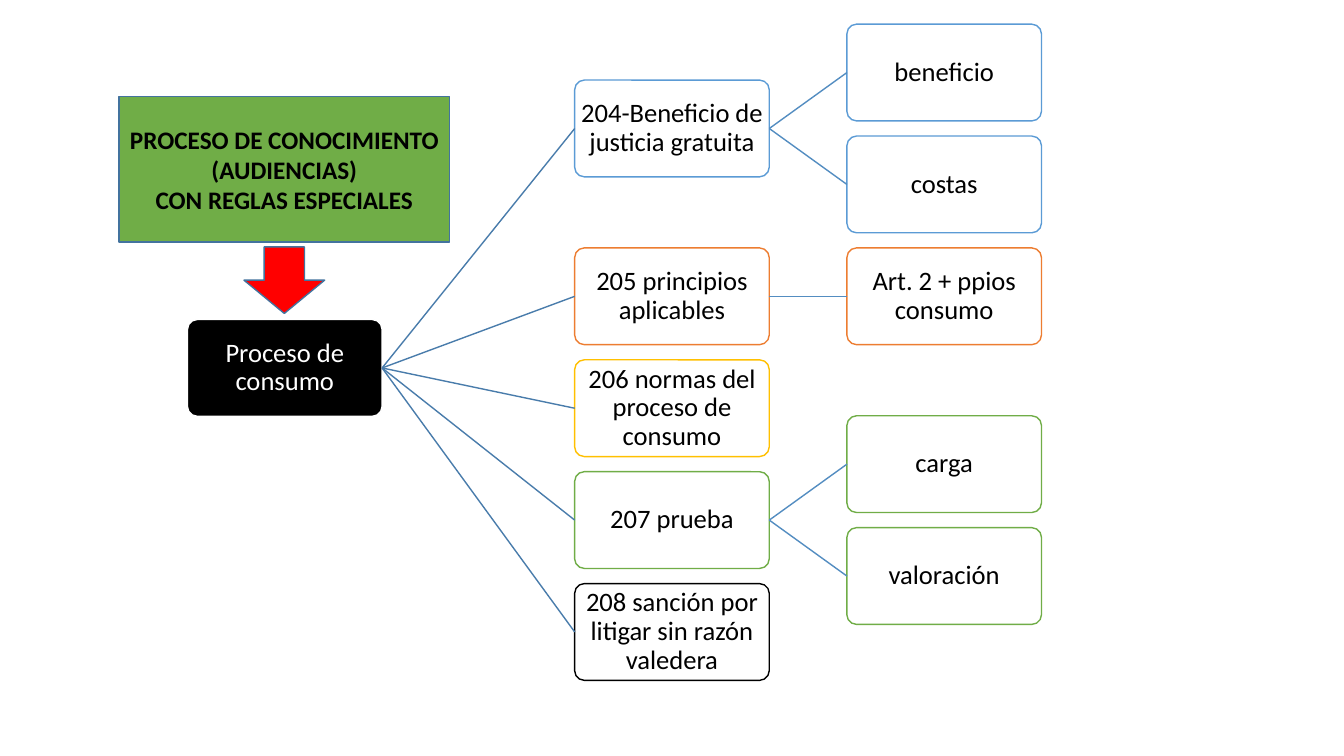
from lxml.etree import SubElement
from pptx import Presentation
from pptx.dml.color import RGBColor as RGB
from pptx.enum.shapes import MSO_CONNECTOR as LINK, MSO_SHAPE as SHAPE
from pptx.enum.text import MSO_ANCHOR as ANCHOR, PP_ALIGN as ALIGN
from pptx.oxml.ns import qn
from pptx.util import Inches, Pt

BLACK = RGB(0x00, 0x00, 0x00)
WHITE = RGB(0xFF, 0xFF, 0xFF)
RED = RGB(0xFF, 0x00, 0x00)
BLUE = RGB(0x5B, 0x9B, 0xD5)
ORANGE = RGB(0xED, 0x7D, 0x31)
GOLD = RGB(0xFF, 0xC0, 0x00)
GREEN = RGB(0x70, 0xAD, 0x47)
EDGE = RGB(0x43, 0x73, 0x9E)
NEAR = RGB(0x49, 0x7C, 0xAB)
FAR = RGB(0x53, 0x8D, 0xC1)

# Tree grid: column lefts, and rows half a box pitch apart
ROOT, STEM, LEAF = 1.86, 5.7, 8.4
TOP, ROW = 0.24, 0.555
WIDE, HIGH = 1.93, 0.96

deck = Presentation()
deck.slide_width, deck.slide_height = Inches(13.33), Inches(7.5)
slide = deck.slides.add_slide(deck.slide_layouts[6])


def draw(kind, area, fill, edge, lines=(), size=18, color=BLACK, bold=False):
    """Add a filled shape with one centred paragraph per line of text."""
    shape = slide.shapes.add_shape(kind, *map(Inches, area))
    shape.shadow.inherit = False
    shape.fill.solid()
    shape.fill.fore_color.rgb = fill
    shape.line.color.rgb = edge
    shape.line.width = Pt(1)
    frame = shape.text_frame
    frame.word_wrap = True
    frame.vertical_anchor = ANCHOR.MIDDLE
    for i, line in enumerate(lines):
        para = frame.add_paragraph() if i else frame.paragraphs[0]
        para.alignment = ALIGN.CENTER
        run = para.add_run()
        run.text = line
        font = run.font
        font.name, font.size, font.bold = "Calibri", Pt(size), bold
        font.color.rgb = color
    return shape


def node(left, row, text, fill, edge, color=BLACK, source=None, tint=None):
    """Add a tree box and link it to the box it springs from."""
    area = (left, TOP + row * ROW, WIDE, HIGH)
    box = draw(SHAPE.ROUNDED_RECTANGLE, area, fill, edge, [text], 19, color)
    box.adjustments[0] = 0.1
    frame = box.text_frame
    frame.margin_left = frame.margin_right = Inches(0.01)
    frame.margin_top = frame.margin_bottom = Inches(0.01)
    frame.paragraphs[0].line_spacing = 0.9
    if source is not None:
        link = slide.shapes.add_connector(LINK.STRAIGHT, 0, 0, 0, 0)
        link.begin_connect(source, 3)
        link.end_connect(box, 1)
        link.line.color.rgb = tint
        link.line.width = Pt(1)
        SubElement(link._element.spPr, qn("a:effectLst"))
    return box


root = node(ROOT, 5.28, "Proceso de consumo", BLACK, WHITE, WHITE)

tree = [
    (1, "204-Beneficio de justicia gratuita", BLUE,
     [(0, "beneficio"), (2, "costas")]),
    (4, "205 principios aplicables", ORANGE, [(4, "Art. 2 + ppios consumo")]),
    (6, "206 normas del proceso de consumo", GOLD, []),
    (8, "207 prueba", GREEN, [(7, "carga"), (9, "valoración")]),
    (10, "208 sanción por litigar sin razón valedera", BLACK, []),
]
for row, text, hue, leaves in tree:
    stem = node(STEM, row, text, WHITE, hue, source=root, tint=NEAR)
    for spot, word in leaves:
        node(LEAF, spot, word, WHITE, hue, source=stem, tint=FAR)

draw(SHAPE.RECTANGLE, (1.18, 0.96, 3.28, 1.44), GREEN, EDGE,
     ["PROCESO DE CONOCIMIENTO (AUDIENCIAS)", "CON REGLAS ESPECIALES"],
     bold=True)
draw(SHAPE.DOWN_ARROW, (2.42, 2.45, 0.8, 0.66), RED, EDGE)

deck.save("out.pptx")
